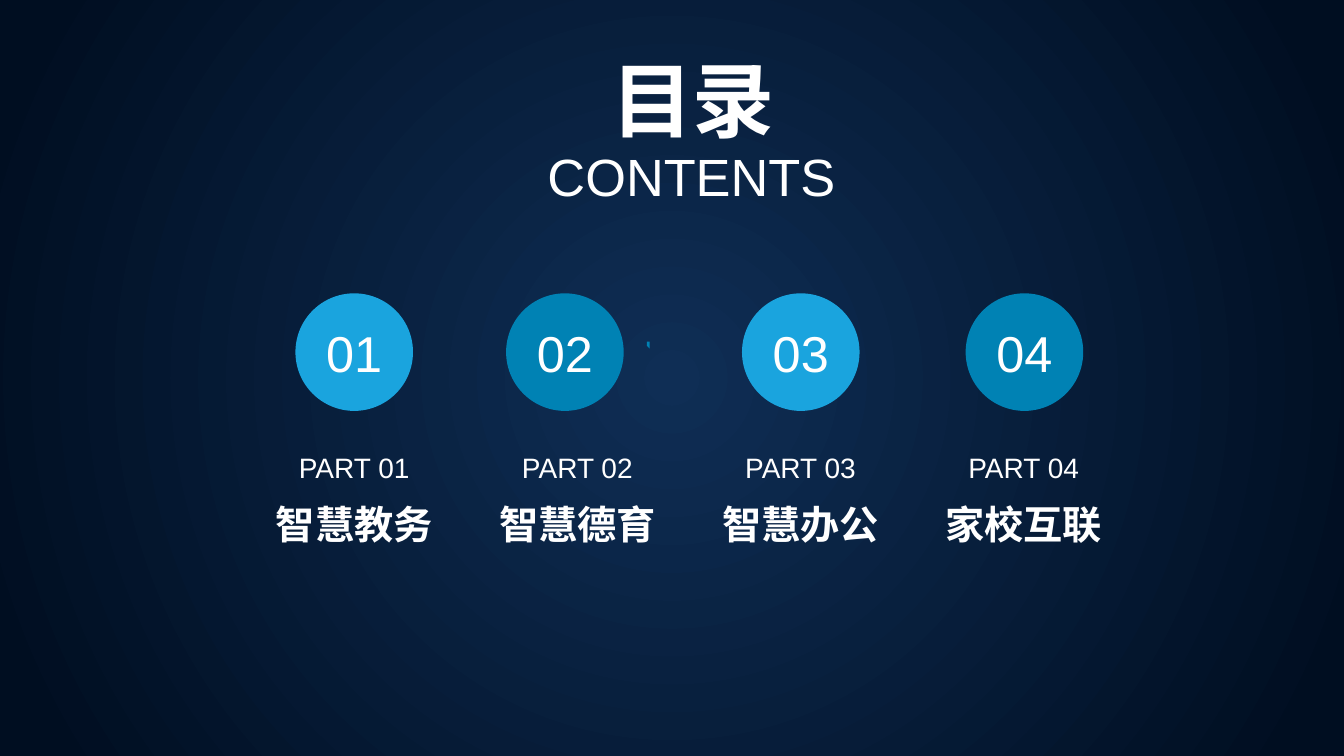
from dataclasses import dataclass

from lxml import etree
from pptx import Presentation
from pptx.dml.color import RGBColor
from pptx.enum import shapes, text
from pptx.oxml import ns
from pptx.util import Pt


@dataclass(frozen=True)
class Theme:
    font: str = "Arial"
    white: str = "FFFFFF"
    glow: str = "0F2E55"
    night: str = "000E21"
    sky: str = "1AA4DE"
    ocean: str = "0082B4"
    title: float = 58.6
    subtitle: float = 37.4
    number: float = 36
    chapter: float = 28
    caption: float = 20


THEME = Theme()
WIDTH, HEIGHT = 960, 540
COLUMN_LEFT, COLUMN_STEP, COLUMN_WIDTH = 160.5, 159.4, 185
CIRCLE_TOP, CIRCLE_SIZE = 209.5, 84
# Chapter name, left edge of its circle, circle colour
CHAPTERS = [
    ("智慧教务", 211, THEME.sky),
    ("智慧德育", 361.5, THEME.ocean),
    ("智慧办公", 530, THEME.sky),
    ("家校互联", 689.75, THEME.ocean),
]


def write(s, words, size, bold=False, spacing=1.0):
    tf = s.text_frame
    tf.text = words
    tf.word_wrap = True
    p = tf.paragraphs[0]
    p.alignment = text.PP_ALIGN.CENTER
    p.line_spacing = spacing
    r = p.runs[0]
    r.font.name = THEME.font
    r.font.size = Pt(size)
    r.font.bold = bold
    r.font.color.rgb = RGBColor.from_string(THEME.white)
    return tf


def add_label(sp, words, left, top, width, height, size, bold=False):
    s = sp.add_textbox(Pt(left), Pt(top), Pt(width), Pt(height))
    write(s, words, size, bold, 0.9)


def paint(s, color):
    s.shadow.inherit = False
    s.fill.solid()
    s.fill.fore_color.rgb = RGBColor.from_string(color)
    s.line.fill.background()


def add_circle(sp, number, left, color):
    s = sp.add_shape(shapes.MSO_SHAPE.OVAL, Pt(left), Pt(CIRCLE_TOP),
                     Pt(CIRCLE_SIZE), Pt(CIRCLE_SIZE))
    paint(s, color)
    tf = write(s, number, THEME.number)
    tf.vertical_anchor = text.MSO_ANCHOR.MIDDLE


def add_backdrop(sp):
    s = sp.add_shape(shapes.MSO_SHAPE.RECTANGLE, 0, 0, Pt(WIDTH), Pt(HEIGHT))
    s.shadow.inherit = False
    s.line.fill.background()
    s.fill.gradient()
    stops = zip(s.fill.gradient_stops, (THEME.glow, THEME.night), (0, 0.94))
    for stop, color, position in stops:
        stop.color.rgb = RGBColor.from_string(color)
        stop.position = position
    # Turn the linear gradient into a circular one around the centre
    grad = s.element.spPr.find(ns.qn("a:gradFill"))
    grad.remove(grad.find(ns.qn("a:lin")))
    circle = etree.SubElement(grad, ns.qn("a:path"), {"path": "circle"})
    etree.SubElement(circle, ns.qn("a:fillToRect"),
                     {side: "50000" for side in "ltrb"})


def add_chip(sp):
    builder = sp.build_freeform(463.75, 249, scale=Pt(1))
    builder.add_line_segments([(463.75, 244), (461.5, 244), (461.5, 247)])
    paint(builder.convert_to_shape(), THEME.ocean)


def main():
    prs = Presentation()
    prs.slide_width, prs.slide_height = Pt(WIDTH), Pt(HEIGHT)
    sp = prs.slides.add_slide(prs.slide_layouts[6]).shapes

    # Background and heading
    add_backdrop(sp)
    add_label(sp, "目录", 412.5, 39.5, 165, 55, THEME.title, True)
    add_label(sp, "CONTENTS", 362, 104.5, 264, 29.5, THEME.subtitle)

    # Four chapters
    for i, (name, circle_left, color) in enumerate(CHAPTERS):
        number = f"{i + 1:02}"
        left = COLUMN_LEFT + i * COLUMN_STEP
        add_circle(sp, number, circle_left, color)
        add_label(sp, f"PART {number}", left, 321, COLUMN_WIDTH, 37.5, THEME.caption)
        add_label(sp, name, left, 358, COLUMN_WIDTH, 24.5, THEME.chapter, True)

    # Small chip beside the second circle
    add_chip(sp)

    prs.save("out.pptx")


if __name__ == "__main__":
    main()
